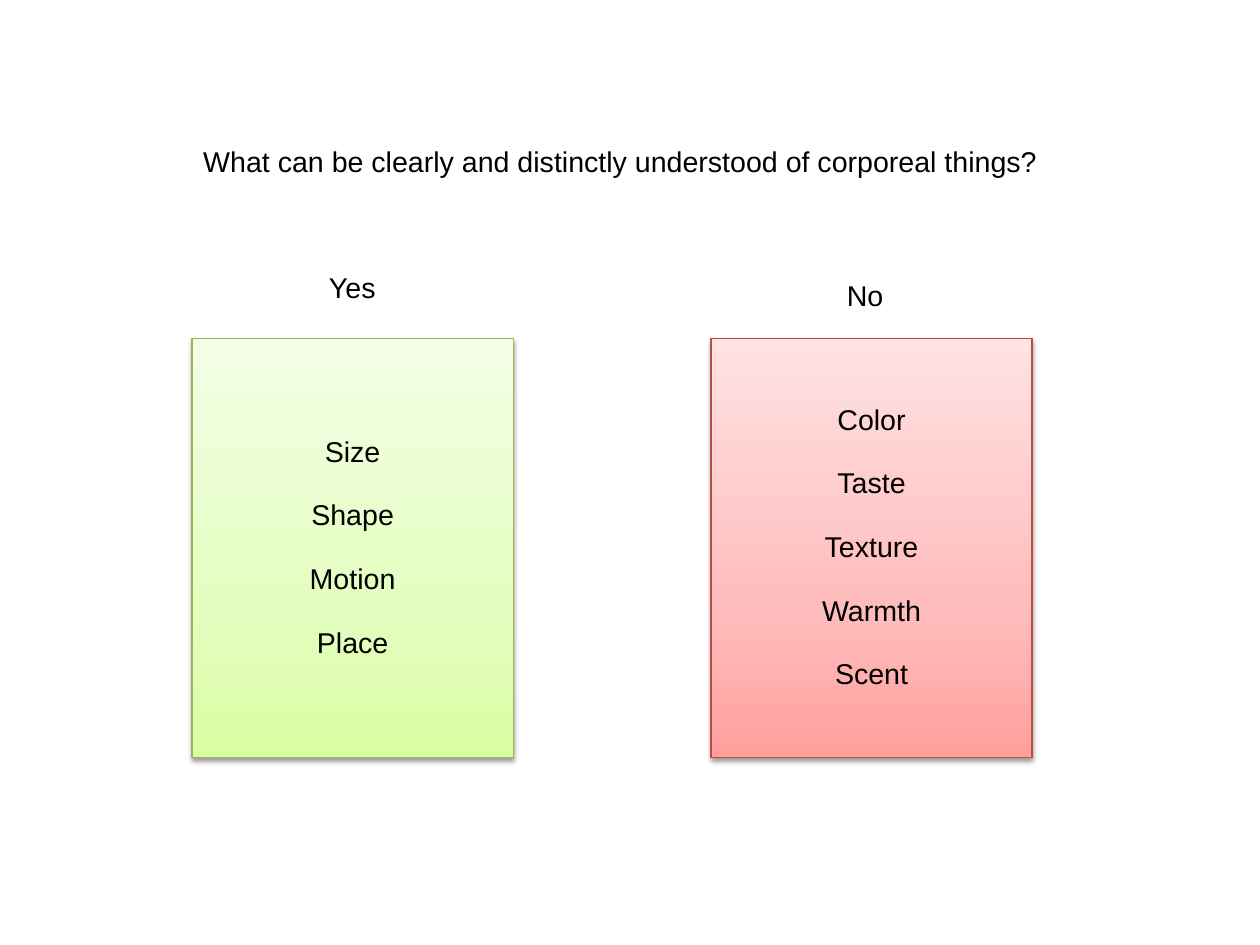
from copy import deepcopy

from lxml import etree
from pptx import Presentation
from pptx.dml.color import RGBColor
from pptx.enum.shapes import MSO_SHAPE
from pptx.enum.text import MSO_ANCHOR, MSO_AUTO_SIZE, PP_ALIGN
from pptx.oxml.ns import qn
from pptx.util import Cm, Inches, Pt

RECTANGLE = MSO_SHAPE.RECTANGLE
MIDDLE = MSO_ANCHOR.MIDDLE
GROW = MSO_AUTO_SIZE.SHAPE_TO_FIT_TEXT
LEFT, CENTER = PP_ALIGN.LEFT, PP_ALIGN.CENTER

# Content: text, left, top, width
LABELS = [
    ("What can be clearly and distinctly understood of corporeal things?", 1.68, 1.24, 7.56),
    ("Yes", 2.78, 2.34, 0.61),
    ("No", 7.31, 2.41, 0.52),
]
PANELS = [
    ("green", ["Size", "Shape", "Motion", "Place"]),
    ("red", ["Color", "Taste", "Texture", "Warmth", "Scent"]),
]

# Style and layout
COLORS = {
    "text": "000000",
    "shadow": "000000",
    "green": ["DAFEA4", "E3FEBF", "F4FEE6"],
    "green line": "97B853",
    "red": ["FFA09D", "FFBCBC", "FFE2E2"],
    "red line": "BD4B48",
}
STOP_POSITIONS = [0, 0.35, 1]
PANEL_LEFT, PANEL_TOP, PANEL_PITCH = 1.68, 2.96, 4.54
PANEL_WIDTH, PANEL_HEIGHT = 2.81, 3.67
LABEL_HEIGHT = 0.38
ITEM_GAP = 20


def write_lines(text_frame, lines, alignment, gap=0):
    for index, line in enumerate(lines):
        paragraph = text_frame.paragraphs[0] if index == 0 else text_frame.add_paragraph()
        paragraph.text = line
        paragraph.alignment = alignment
        paragraph.line_spacing = 0.93
        paragraph.space_before = Pt(gap if index else 0)
        paragraph.font.name = "Arial"
        paragraph.font.size = Pt(18)
        paragraph.font.color.rgb = RGBColor.from_string(COLORS["text"])


def fill_gradient(shape, colors):
    shape.fill.gradient()
    shape.fill.gradient_angle = 90
    stop_list = shape._element.spPr.find(".//" + qn("a:gsLst"))
    stop_list.append(deepcopy(stop_list[-1]))
    for stop, color, position in zip(shape.fill.gradient_stops, colors, STOP_POSITIONS):
        stop.color.rgb = RGBColor.from_string(color)
        stop.position = position


def add_shadow(shape):
    shape.shadow.inherit = False
    effects = shape._element.spPr.find(qn("a:effectLst"))
    shadow = etree.SubElement(effects, qn("a:outerShdw"), blurRad=str(Pt(3.1)),
                              dist=str(Pt(1.6)), dir="5400000", rotWithShape="0")
    color = etree.SubElement(shadow, qn("a:srgbClr"), val=COLORS["shadow"])
    etree.SubElement(color, qn("a:alpha"), val="38000")


presentation = Presentation()
presentation.slide_width = Cm(28)
presentation.slide_height = Cm(21)
slide = presentation.slides.add_slide(presentation.slide_layouts[6])

# Question and column headings
for text, left, top, width in LABELS:
    label = slide.shapes.add_textbox(Inches(left), Inches(top), Inches(width), Inches(LABEL_HEIGHT))
    label.text_frame.word_wrap = False
    label.text_frame.auto_size = GROW
    write_lines(label.text_frame, [text], LEFT)

# Answer panels
for column, (color_name, items) in enumerate(PANELS):
    panel = slide.shapes.add_shape(
        RECTANGLE, Inches(PANEL_LEFT + column * PANEL_PITCH), Inches(PANEL_TOP),
        Inches(PANEL_WIDTH), Inches(PANEL_HEIGHT))
    fill_gradient(panel, COLORS[color_name])
    panel.line.color.rgb = RGBColor.from_string(COLORS[color_name + " line"])
    panel.line.width = Pt(0.75)
    add_shadow(panel)
    panel.text_frame.vertical_anchor = MIDDLE
    write_lines(panel.text_frame, items, CENTER, ITEM_GAP)

presentation.save("out.pptx")
